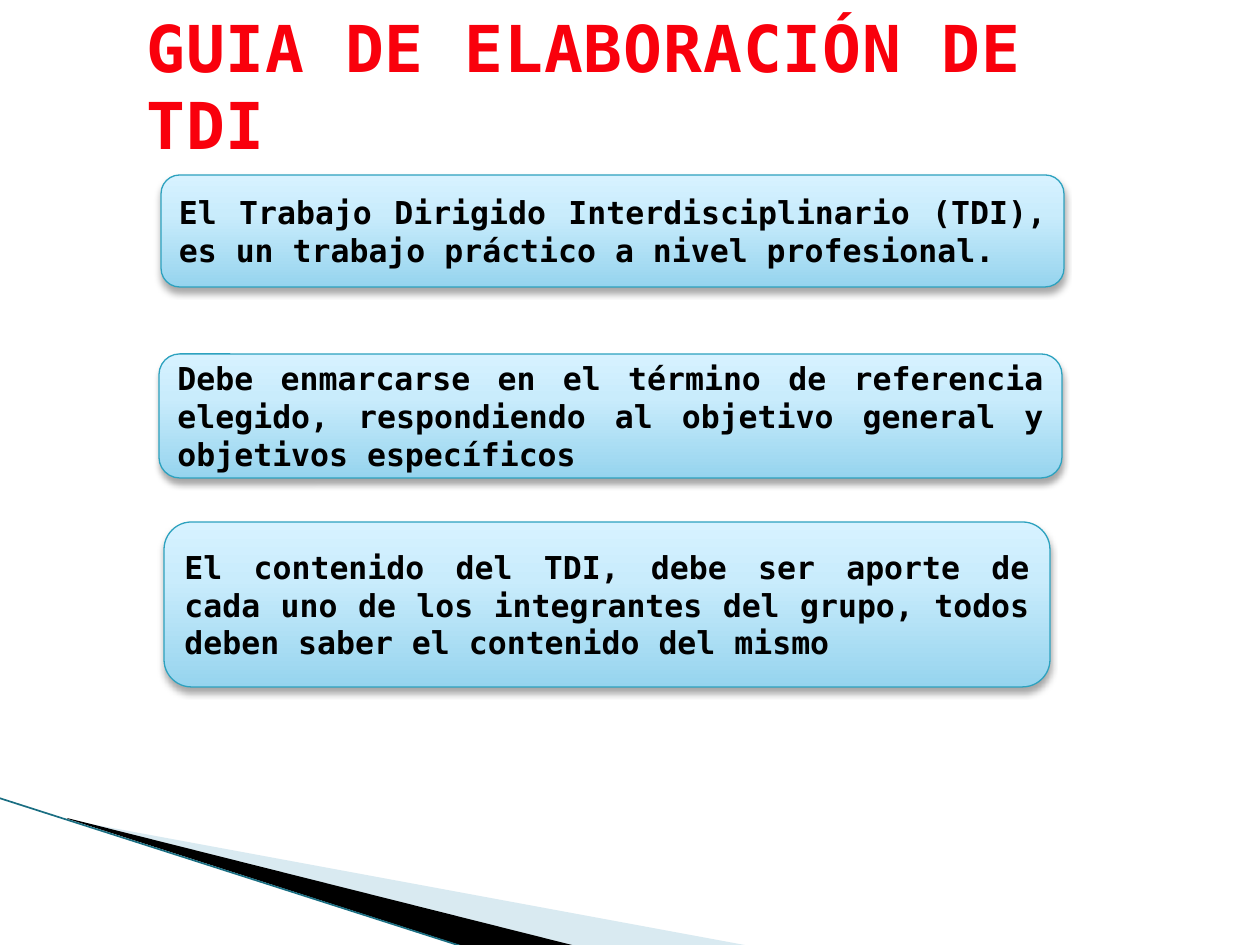
from copy import deepcopy
from lxml import etree
from pptx import Presentation
from pptx import util as u
from pptx.dml.color import RGBColor
from pptx.enum import shapes, text
from pptx.oxml import parse_xml
from pptx.oxml.ns import nsdecls, qn

PX = 914400 / 126
FONT = "DejaVu Sans Mono"


def rgb(code):
    return RGBColor.from_string(code)


def write(shape, words, size, color, align, spc=0):
    frame = shape.text_frame
    frame.word_wrap = True
    frame.vertical_anchor = text.MSO_ANCHOR.MIDDLE
    para = frame.paragraphs[0]
    para.alignment = align
    run = para.add_run()
    run.text = words
    run.font.name = FONT
    run.font.size = u.Pt(size)
    run.font.bold = True
    run.font.color.rgb = rgb(color)
    if spc:
        run.font._element.set("spc", str(spc))


prs = Presentation()
prs.slide_width = u.Inches(10)
prs.slide_height = u.Inches(7.5)
slide = prs.slides.add_slide(prs.slide_layouts[6])
tree = slide.shapes

wedges = [
    ([(69, 820), (750, 946), (575, 946), (69, 819)], "A0CBDC", 40),
    ([(67, 818), (576, 946), (469, 948), (68, 819)], "000000", 100),
]
for points, color, alpha in wedges:
    form = tree.build_freeform(*points[0], scale=PX)
    form.add_line_segments(points[1:], close=True)
    wedge = form.convert_to_shape()
    wedge.shadow.inherit = False
    wedge.fill.solid()
    wedge.fill.fore_color.rgb = rgb(color)
    wedge.line.fill.background()
    if alpha < 100:
        tone = wedge._element.spPr.find(".//" + qn("a:srgbClr"))
        etree.SubElement(tone, qn("a:alpha")).set("val", str(alpha * 1000))

ends = [round(n * PX) for n in (-1, 798, 467, 948)]
edge = tree.add_connector(shapes.MSO_CONNECTOR.STRAIGHT, *ends)
edge.line.color.rgb = rgb("1A6E82")
edge.line.width = u.Pt(0.95)
etree.SubElement(edge._element.spPr, qn("a:effectLst"))

title = tree.add_textbox(*[round(n * PX) for n in (134, 26, 1022, 118)])
write(title, "GUIA DE ELABORACIÓN DE TDI", 36.9, "F9000C",
      text.PP_ALIGN.LEFT, spc=50)

cards = [
    ((159, 354, 903, 124),
     "Debe enmarcarse en el término de referencia elegido, respondiendo "
     "al objetivo general y objetivos específicos"),
    ((161, 175, 903, 112),
     "El Trabajo Dirigido Interdisciplinario (TDI), es un trabajo "
     "práctico a nivel profesional."),
    ((164, 522, 886, 165),
     "El contenido del TDI, debe ser aporte de cada uno de los integrantes "
     "del grupo, todos deben saber el contenido del mismo"),
]
stops = [(0, "96D4EE"), (0.65, "C9ECFC"), (1, "D7F2FF")]
shade = (
    f'<a:outerShdw {nsdecls("a")} blurRad="{u.Pt(4)}" dist="{u.Pt(3)}" '
    'dir="5400000" rotWithShape="0"><a:srgbClr val="000000">'
    '<a:alpha val="35000"/></a:srgbClr></a:outerShdw>'
)
for box, words in cards:
    card = tree.add_shape(shapes.MSO_SHAPE.ROUNDED_RECTANGLE,
                          *[round(n * PX) for n in box])
    card.fill.gradient()
    card.fill.gradient_angle = 90
    ramp = card._element.spPr.find(".//" + qn("a:gsLst"))
    ramp.append(deepcopy(ramp[0]))
    for stop, (place, color) in zip(card.fill.gradient_stops, stops):
        stop.position = place
        stop.color.rgb = rgb(color)
    card.line.color.rgb = rgb("2DA2BF")
    card.line.width = u.Pt(0.75)
    card.shadow.inherit = False
    card._element.spPr.find(qn("a:effectLst")).append(parse_xml(shade))
    write(card, words, 18, "000000", text.PP_ALIGN.JUSTIFY)

prs.save("out.pptx")
